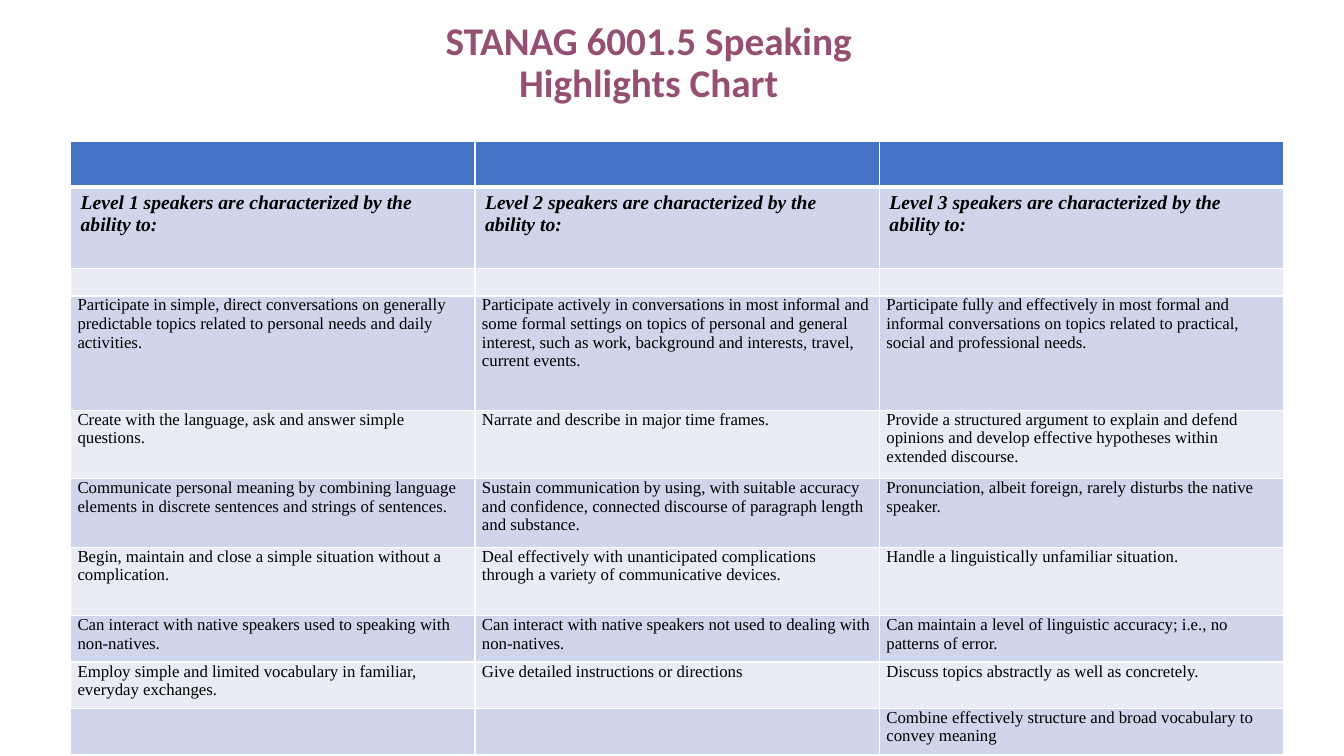
"""Build the STANAG 6001.5 speaking highlights slide."""
from lxml.etree import SubElement
from pptx import Presentation
from pptx.dml.color import RGBColor
from pptx.enum.text import MSO_ANCHOR, MSO_AUTO_SIZE, PP_ALIGN
from pptx.oxml.ns import qn
from pptx.util import Pt

THEME = {
    "title": {"name": "Calibri", "size": Pt(28), "bold": True, "italic": False},
    "level": {"name": "Times New Roman", "size": Pt(14), "bold": True, "italic": True},
    "body": {"name": "Times New Roman", "size": Pt(12), "bold": False, "italic": False},
    "title_color": RGBColor.from_string("954F72"),
    "text_color": RGBColor.from_string("000000"),
    "header": RGBColor.from_string("4472C4"),
    "bands": [RGBColor.from_string("E9EBF5"), RGBColor.from_string("CFD5EA")],
    "border": "FFFFFF",
}
LEVEL_MARGINS = {"margin_left": Pt(7.2), "margin_right": Pt(7.2),
                 "margin_top": Pt(3.6), "margin_bottom": Pt(3.6)}
BODY_MARGINS = {"margin_left": Pt(5), "margin_right": Pt(5),
                "margin_top": Pt(0), "margin_bottom": Pt(0)}
EMPTY = ["", "", ""]
ROWS = [
    (33, EMPTY),
    (58, [f"Level {n} speakers are characterized by the ability to:" for n in (1, 2, 3)]),
    (19.6, EMPTY),
    (81.6, [
        "Participate in simple, direct conversations on generally predictable topics "
        "related to personal needs and daily activities.",
        "Participate actively in conversations in most informal and some formal settings on topics "
        "of personal and general interest, such as work, background and interests, travel, "
        "current events.",
        "Participate fully and effectively in most formal and informal conversations on topics "
        "related to practical, social and professional needs."]),
    (49, [
        "Create with the language, ask and answer simple questions.",
        "Narrate and describe in major time frames.",
        "Provide a structured argument to explain and defend opinions and develop effective "
        "hypotheses within extended discourse."]),
    (49, [
        "Communicate personal meaning by combining language elements in discrete sentences "
        "and strings of sentences.",
        "Sustain communication by using, with suitable accuracy and confidence, connected "
        "discourse of paragraph length and substance.",
        "Pronunciation, albeit foreign, rarely disturbs the native speaker."]),
    (49, [
        "Begin, maintain and close a simple situation without a complication.",
        "Deal effectively with unanticipated complications through a variety of "
        "communicative devices.",
        "Handle a linguistically unfamiliar situation."]),
    (33, [
        "Can interact with native speakers used to speaking with non-natives.",
        "Can interact with native speakers not used to dealing with non-natives.",
        "Can maintain a level of linguistic accuracy; i.e., no patterns of error."]),
    (33, [
        "Employ simple and limited vocabulary in familiar, everyday exchanges.",
        "Give detailed instructions or directions",
        "Discuss topics abstractly as well as concretely."]),
    (33, ["", "", "Combine effectively structure and broad vocabulary to convey meaning"]),
]


def set_attrs(target, values):
    for name, value in values.items():
        setattr(target, name, value)


def add_border(cell, side, width):
    ln = SubElement(cell._tc.get_or_add_tcPr(), qn(f"a:ln{side}"), w=str(Pt(width)))
    SubElement(SubElement(ln, qn("a:solidFill")), qn("a:srgbClr"), val=THEME["border"])


prs = Presentation()
set_attrs(prs, {"slide_width": Pt(960), "slide_height": Pt(540)})
s = prs.slides.add_slide(prs.slide_layouts[5])

title = s.shapes.title
set_attrs(title, {"left": Pt(256.3), "top": Pt(0.7), "width": Pt(414), "height": Pt(90)})
tf = title.text_frame
set_attrs(tf, {"word_wrap": True, "auto_size": MSO_AUTO_SIZE.NONE,
               "vertical_anchor": MSO_ANCHOR.MIDDLE})
p = tf.paragraphs[0]
p.text = "STANAG 6001.5 Speaking\vHighlights Chart"
set_attrs(p, {"alignment": PP_ALIGN.CENTER, "line_spacing": 0.9})
for r in p.runs:
    set_attrs(r.font, THEME["title"])
    r.font.color.rgb = THEME["title_color"]

total = sum(height for height, texts in ROWS)
table = s.shapes.add_table(len(ROWS), 3, Pt(50.4), Pt(100.8), Pt(866.7), Pt(total)).table
for column in table.columns:
    column.width = Pt(288.9)

for i, (height, texts) in enumerate(ROWS):
    table.rows[i].height = Pt(height)
    style = THEME["level"] if i == 1 else THEME["body"]
    for j, text in enumerate(texts):
        cell = table.cell(i, j)
        set_attrs(cell, LEVEL_MARGINS if i == 1 else BODY_MARGINS)
        for side, width in {"L": 1, "R": 1, "T": 3 if i == 1 else 1, "B": 1 if i else 3}.items():
            add_border(cell, side, width)
        cell.fill.solid()
        cell.fill.fore_color.rgb = THEME["bands"][i % 2] if i else THEME["header"]
        p = cell.text_frame.paragraphs[0]
        if not text:
            SubElement(p._p, qn("a:endParaRPr"), sz=str(int(style["size"].pt * 100)))
            continue
        if i > 1:
            p.space_after = Pt(9.1)
        r = p.add_run()
        r.text = text
        set_attrs(r.font, style)
        r.font.color.rgb = THEME["text_color"]

prs.save("out.pptx")
